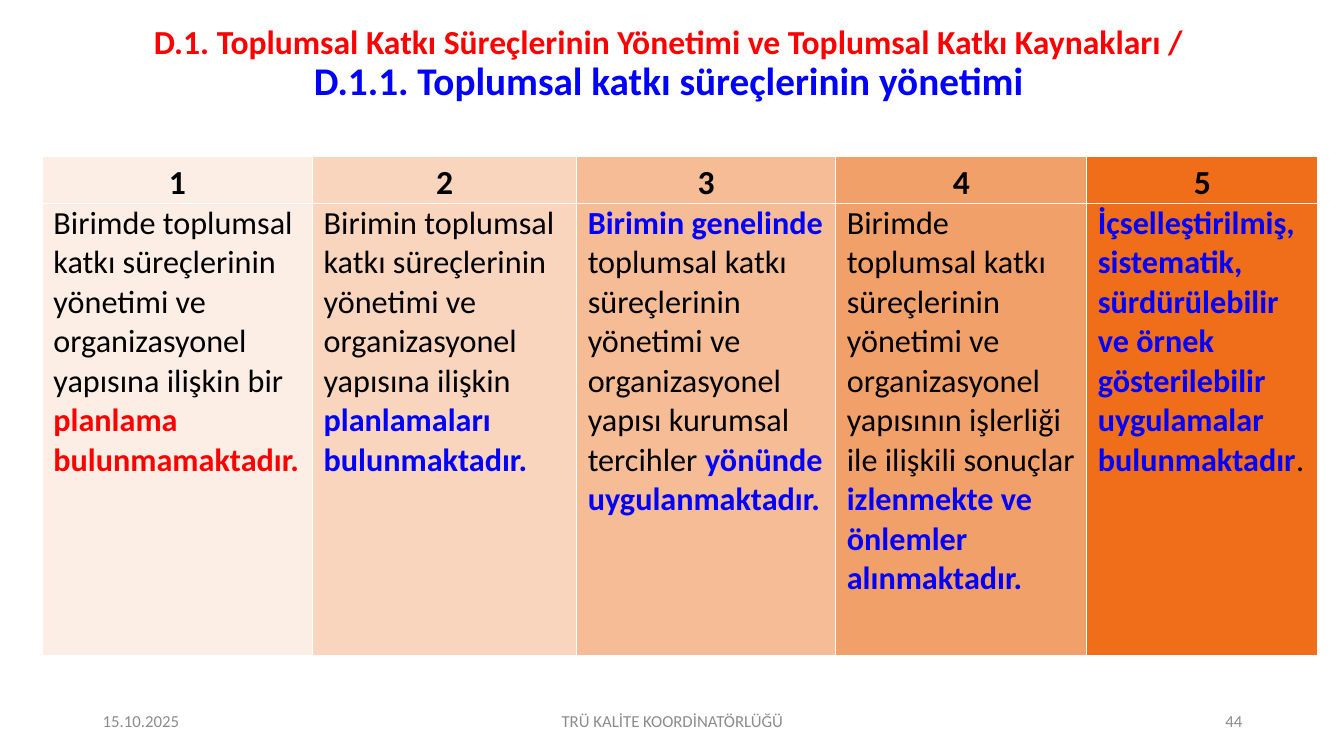
from lxml import etree
from pptx import Presentation
from pptx import util as u
from pptx.dml import color
from pptx.enum import text
from pptx.oxml import ns

Inches = u.Inches
FONT = "Calibri"
COLORS = {"red": "FF0000", "blue": "0000FF", "black": "000000",
          "gray": "8C8C8C", "white": "FFFFFF"}
ALIGN = text.PP_ALIGN

# Each level: column width, fill, and its description as (text, colour) spans
LEVELS = [
    (2.68, "FCEEE4", [
        ("Birimde toplumsal katkı süreçlerinin yönetimi ve organizasyonel "
         "yapısına ilişkin bir ", "black"),
        ("planlama bulunmamaktadır.", "red")]),
    (2.62, "F9D5BD", [
        ("Birimin toplumsal katkı süreçlerinin yönetimi ve organizasyonel "
         "yapısına ilişkin ", "black"),
        ("planlamaları bulunmaktadır.", "blue")]),
    (2.57, "F5BC95", [
        ("Birimin genelinde ", "blue"),
        ("toplumsal katkı süreçlerinin yönetimi ve organizasyonel yapısı "
         "kurumsal tercihler ", "black"),
        ("yönünde uygulanmaktadır.", "blue")]),
    (2.49, "F1A069", [
        ("Birimde toplumsal katkı süreçlerinin yönetimi ve organizasyonel "
         "yapısının işlerliği ile ilişkili sonuçlar ", "black"),
        ("izlenmekte ve önlemler alınmaktadır.", "blue")]),
    (2.29, "F06E1A", [
        ("İçselleştirilmiş, sistematik, sürdürülebilir ve örnek "
         "gösterilebilir uygulamalar bulunmaktadır", "blue"),
        (".", "black")]),
]


def add_span(para, words, *, size, fill="black", bold=False):
    span = para.add_run()
    span.text = words
    span.font.name = FONT
    span.font.size = u.Pt(size)
    span.font.bold = bold
    span.font.color.rgb = color.RGBColor.from_string(COLORS[fill])


def set_title(page):
    title = page.shapes.title
    title.left, title.top = Inches(0), Inches(0.19)
    title.width, title.height = Inches(13.26), Inches(0.9)
    frame = title.text_frame
    frame.auto_size = text.MSO_AUTO_SIZE.NONE
    frame.vertical_anchor = text.MSO_ANCHOR.MIDDLE
    para = frame.paragraphs[0]
    para.alignment = ALIGN.CENTER
    para.line_spacing = 0.9
    add_span(para, "D.1. Toplumsal Katkı Süreçlerinin Yönetimi ve Toplumsal "
             "Katkı Kaynakları /", size=24, fill="red", bold=True)
    para.add_line_break()
    add_span(para, "D.1.1. Toplumsal katkı süreçlerinin yönetimi",
             size=28, fill="blue", bold=True)


def add_footer(page, words, *, left, width, align):
    box = page.shapes.add_textbox(Inches(left), Inches(6.95),
                                  Inches(width), Inches(0.4))
    frame = box.text_frame
    frame.word_wrap = True
    frame.vertical_anchor = text.MSO_ANCHOR.MIDDLE
    para = frame.paragraphs[0]
    para.alignment = align
    add_span(para, words, size=12, fill="gray")


def format_cell(cell, fill):
    cell.margin_left = cell.margin_right = Inches(0.07)
    cell.margin_top = cell.margin_bottom = 0
    props = cell._tc.get_or_add_tcPr()
    for side in ("a:lnL", "a:lnR", "a:lnT", "a:lnB"):
        line = etree.SubElement(props, ns.qn(side), w=str(u.Pt(1)))
        solid = etree.SubElement(line, ns.qn("a:solidFill"))
        etree.SubElement(solid, ns.qn("a:srgbClr"), val=COLORS["white"])
    cell.fill.solid()
    cell.fill.fore_color.rgb = color.RGBColor.from_string(fill)


def add_levels_table(page):
    width = sum(level[0] for level in LEVELS)
    table = page.shapes.add_table(2, len(LEVELS), Inches(0.42), Inches(1.55),
                                  Inches(width), Inches(4.95)).table
    table.rows[0].height = Inches(0.47)
    table.rows[1].height = Inches(4.48)
    for index, (column_width, fill, spans) in enumerate(LEVELS):
        table.columns[index].width = Inches(column_width)
        header, body = table.cell(0, index), table.cell(1, index)
        format_cell(header, fill)
        format_cell(body, fill)

        # Level number
        header.vertical_anchor = text.MSO_ANCHOR.BOTTOM
        para = header.text_frame.paragraphs[0]
        para.alignment = ALIGN.CENTER
        para.line_spacing = 1.15
        add_span(para, str(index + 1), size=24, bold=True)

        # Description: every coloured span is bold
        para = body.text_frame.paragraphs[0]
        para._p.get_or_add_pPr().set("marL", str(Inches(0.04)))
        for words, fill_name in spans:
            add_span(para, words, size=23, fill=fill_name,
                     bold=fill_name != "black")


def main():
    deck = Presentation()
    deck.slide_width, deck.slide_height = Inches(13.33), Inches(7.5)
    page = deck.slides.add_slide(deck.slide_layouts[5])
    set_title(page)
    add_levels_table(page)
    # Footer
    add_footer(page, "15.10.2025", left=0.92, width=3, align=ALIGN.LEFT)
    add_footer(page, "TRÜ KALİTE KOORDİNATÖRLÜĞÜ", left=4.42, width=4.5,
               align=ALIGN.CENTER)
    add_footer(page, "44", left=9.42, width=3, align=ALIGN.RIGHT)
    deck.save("out.pptx")


if __name__ == "__main__":
    main()
